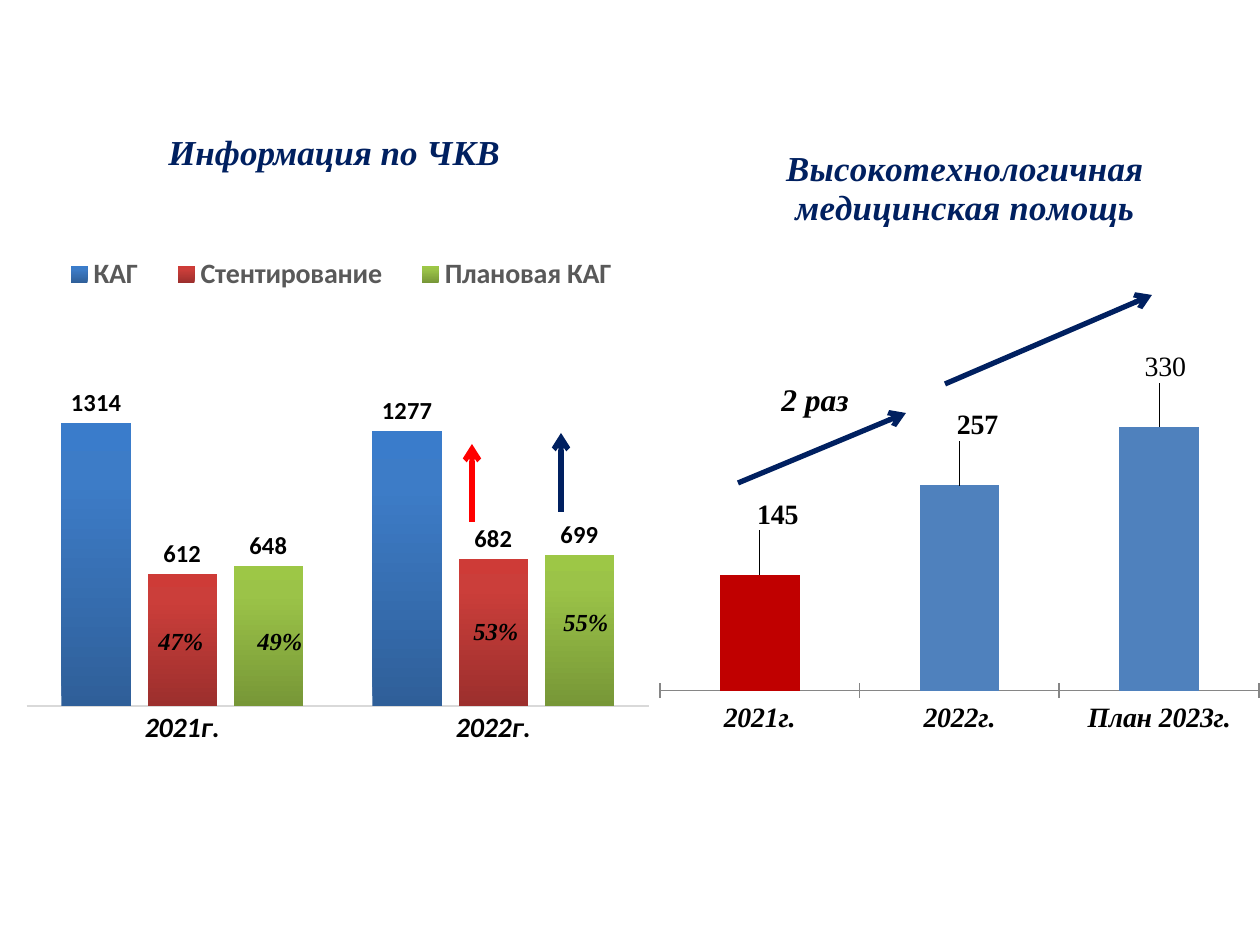
from copy import deepcopy

from lxml import etree
from pptx import Presentation
from pptx.chart.data import CategoryChartData
from pptx.dml.color import RGBColor
from pptx.enum.chart import (XL_CHART_TYPE, XL_LABEL_POSITION,
                             XL_LEGEND_POSITION, XL_TICK_MARK)
from pptx.enum.shapes import MSO_CONNECTOR
from pptx.enum.text import MSO_AUTO_SIZE, PP_ALIGN
from pptx.oxml.ns import qn
from pptx.util import Pt

COLUMNS = XL_CHART_TYPE.COLUMN_CLUSTERED
OUTSIDE_END = XL_LABEL_POSITION.OUTSIDE_END
LEGEND_BOTTOM = XL_LEGEND_POSITION.BOTTOM
TICK_NONE, TICK_CROSS = XL_TICK_MARK.NONE, XL_TICK_MARK.CROSS
STRAIGHT = MSO_CONNECTOR.STRAIGHT
FIT_SHAPE = MSO_AUTO_SIZE.SHAPE_TO_FIT_TEXT
CENTER = PP_ALIGN.CENTER

NAVY = RGBColor(0x00, 0x20, 0x60)
BLACK = RGBColor(0x00, 0x00, 0x00)
RED = RGBColor(0xFF, 0x00, 0x00)
DARK_RED = RGBColor(0xC0, 0x00, 0x00)
BLUE = RGBColor(0x4F, 0x81, 0xBD)
GRAY = RGBColor(0x59, 0x59, 0x59)
AXIS_GRAY = RGBColor(0x86, 0x86, 0x86)
LIGHT_GRAY = RGBColor(0xD9, 0xD9, 0xD9)

SERIF, SANS = "Times New Roman", "Calibri"

# Each series: name, values, gradient colours from bottom to top
PROCEDURES = [
    ("КАГ", (1314, 1277),
     (RGBColor(0x2F, 0x5F, 0x99), RGBColor(0x3D, 0x7C, 0xC7), RGBColor(0x3A, 0x7C, 0xCB))),
    ("Стентирование", (612, 682),
     (RGBColor(0x9C, 0x2F, 0x2D), RGBColor(0xCB, 0x3E, 0x3A), RGBColor(0xCE, 0x3B, 0x37))),
    ("Плановая КАГ", (648, 699),
     (RGBColor(0x77, 0x97, 0x37), RGBColor(0x9B, 0xC3, 0x48), RGBColor(0x9D, 0xC7, 0x46))),
]
GRADIENT_STOPS = (0, 0.8, 1)

# Colour, start and end of each arrow
ARROWS = [
    (RED, (472, 522), (472, 444)),
    (NAVY, (561, 512), (561, 433)),
    (NAVY, (738, 483), (906, 413)),
    (NAVY, (945, 384), (1152, 295)),
]
SHARES = [("47%", 137, 620), ("49%", 236, 620), ("53%", 452, 610), ("55%", 542, 601)]


def px(length):
    return round(length * 914400 / 126)


def set_font(font, name, size, color=BLACK, bold=True, italic=False):
    font.name, font.size = name, Pt(size)
    font.bold, font.italic = bold, italic
    font.color.rgb = color


def set_layout(element, index, inner=False, **places):
    """Give a chart part a manual place, in fractions of the chart."""
    for old in element.findall(qn("c:layout")):
        element.remove(old)
    layout = etree.Element(qn("c:layout"))
    manual = etree.SubElement(layout, qn("c:manualLayout"))
    if inner:
        etree.SubElement(manual, qn("c:layoutTarget"), val="inner")
    if index != 1 or element.tag != qn("c:dLbl"):
        for key in ("x", "y"):
            etree.SubElement(manual, qn(f"c:{key}Mode"), val="edge")
    for key, value in places.items():
        etree.SubElement(manual, qn(f"c:{key}"), val=str(value))
    element.insert(index, layout)


def add_text(page, text, place, size, color=BLACK, wrap=True):
    box = page.shapes.add_textbox(*map(px, place))
    frame = box.text_frame
    frame.word_wrap = wrap
    frame.auto_size = FIT_SHAPE
    para = frame.paragraphs[0]
    para.text = text
    para.alignment = CENTER
    set_font(para.font, SERIF, size, color, italic=True)
    return box


def add_arrow(page, color, start, end):
    arrow = page.shapes.add_connector(STRAIGHT, *map(px, start + end))
    arrow.line.color.rgb = color
    arrow.line.width = Pt(3)
    etree.SubElement(arrow.line._get_or_add_ln(), qn("a:tailEnd"), type="arrow")
    etree.SubElement(arrow._element.spPr, qn("a:effectLst"))


def add_columns(page, place, categories, series, top, gap, axis_font, axis_color, tick, plot):
    data = CategoryChartData()
    data.categories = categories
    for name, values in series:
        data.add_series(name, values)
    chart = page.shapes.add_chart(COLUMNS, *map(px, place), data).chart
    chart.has_title = chart.has_legend = False
    set_font(chart.font, SANS, 10, bold=False)

    columns = chart.plots[0]
    columns.vary_by_categories = False
    columns.gap_width = gap

    values_axis = chart.value_axis
    values_axis.minimum_scale, values_axis.maximum_scale = 0, top
    values_axis.has_major_gridlines = False
    values_axis.visible = False

    axis = chart.category_axis
    axis.major_tick_mark, axis.minor_tick_mark = tick, TICK_NONE
    axis.format.line.color.rgb = axis_color
    axis.format.line.width = Pt(1)
    set_font(axis.tick_labels.font, axis_font, 16, italic=True)

    area = chart.element.xpath("c:chart/c:plotArea")[0]
    set_layout(area, 0, inner=True, **dict(zip("xywh", plot)))
    return chart


def set_labels(series, name, size):
    labels = series.data_labels
    labels.show_value = True
    labels.position = OUTSIDE_END
    set_font(labels.font, name, size)


def set_gradient(series, colors):
    fill = series.format.fill
    fill.gradient()
    fill.gradient_angle = 90
    stop_list = series._element.xpath("c:spPr/a:gradFill/a:gsLst")[0]
    stop_list.insert(1, deepcopy(stop_list[0]))
    for stop, position, color in zip(fill.gradient_stops, GRADIENT_STOPS, colors):
        stop.position = position
        stop.color.rgb = color


def add_care_chart(page):
    chart = add_columns(page, (659, 108, 601, 777), ("2021г.", "2022г.", "План 2023г."),
                        [("Series 1", (145, 257, 330))], 350, 150,
                        SERIF, AXIS_GRAY, TICK_CROSS, (0.0, 0.39, 1.0, 0.36))
    title = chart.chart_title
    title.include_in_layout = False
    para = title.text_frame.paragraphs[0]
    span = para.add_run()
    span.text = "Высокотехнологичная медицинская помощь"
    set_font(span.font, SERIF, 20, NAVY, italic=True)
    set_layout(chart.element.xpath("c:chart/c:title")[0], 1, x=0.2, y=0.04)

    series = chart.plots[0].series[0]
    series.format.fill.solid()
    series.format.fill.fore_color.rgb = BLUE
    first = series.points[0].format.fill
    first.solid()
    first.fore_color.rgb = DARK_RED

    # Labels stand a little above and to the right of their columns
    set_labels(series, SERIF, 16)
    for index, (shift, bold) in enumerate([(0.03, True), (0.03, True), (0.01, False)]):
        label = series.points[index].data_label
        set_font(label.font, SERIF, 16, bold=bold)
        label.position = OUTSIDE_END
        element = series._element.xpath(f"c:dLbls/c:dLbl[c:idx/@val='{index}']")[0]
        set_layout(element, 1, x=shift, y=-0.05)


def add_procedure_chart(page):
    chart = add_columns(page, (0, 186, 669, 591), ("2021г.", "2022г."),
                        [row[:2] for row in PROCEDURES], 1400, 100,
                        SANS, LIGHT_GRAY, TICK_NONE, (0.04, 0.37, 0.93, 0.51))
    columns = chart.plots[0]
    columns.overlap = -24
    for series, (_, _, colors) in zip(columns.series, PROCEDURES):
        set_gradient(series, colors)
        set_labels(series, SANS, 14)

    chart.has_legend = True
    legend = chart.legend
    legend.position = LEGEND_BOTTOM
    legend.include_in_layout = False
    set_font(legend.font, SANS, 16, GRAY)
    set_layout(chart.element.xpath("c:chart/c:legend")[0], 1, x=0.06, y=0.11, w=0.9, h=0.08)


def main():
    deck = Presentation()
    deck.slide_width, deck.slide_height = px(1260), px(945)
    page = deck.slides.add_slide(deck.slide_layouts[6])

    # Charts
    add_care_chart(page)
    add_procedure_chart(page)

    # Heading of the left chart
    heading = add_text(page, "Информация по ЧКВ", (39, 118, 601, 58), 20, NAVY)
    heading.text_frame.margin_right = px(23)
    heading.text_frame.paragraphs[0].line_spacing = 1.15

    # Growth arrows and notes
    for arrow in ARROWS:
        add_arrow(page, *arrow)
    add_text(page, "2 раз", (767, 374, 96, 50), 18, wrap=False)
    for text, left, top in SHARES:
        add_text(page, text, (left, top, 88, 43), 14)

    deck.save("out.pptx")


if __name__ == "__main__":
    main()
